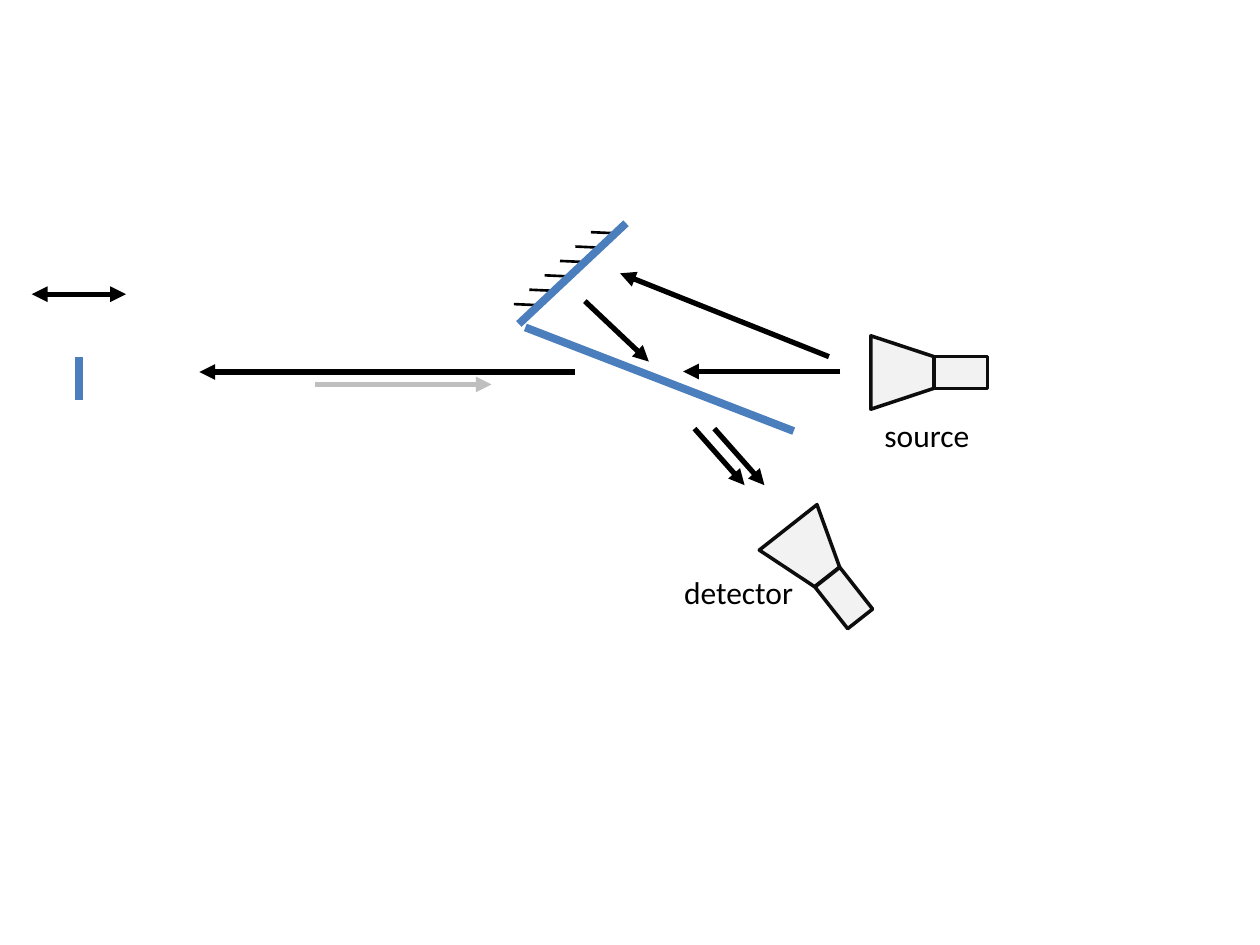
from dataclasses import dataclass
from math import cos, radians, sin

from lxml.etree import SubElement
from pptx import Presentation
from pptx.dml.color import RGBColor
from pptx.enum.shapes import MSO_CONNECTOR as Line, MSO_SHAPE as Shape
from pptx.enum.text import MSO_ANCHOR, PP_ALIGN
from pptx.oxml.ns import qn
from pptx.util import Cm, Pt


@dataclass(frozen=True)
class Theme:
    font: str = "Calibri"
    label_size: float = 18
    black: str = "000000"
    mirror: str = "4B7EBC"
    echo: str = "BFBFBF"
    horn_fill: str = "F2F2F2"
    horn_line: str = "0D0D0D"
    optic_width: float = 4.5
    ray_width: float = 3
    horn_width: float = 2
    tick_width: float = 1.5


THEME = Theme()


def rgb(color):
    return RGBColor.from_string(color)


def add_line(shapes, box, start, end, color, width, heads=()):
    """Draw a line between two points relative to box; heads names its arrow ends."""
    left, top = box[:2]
    c = shapes.add_connector(Line.STRAIGHT, Cm(left + start[0]), Cm(top + start[1]),
                             Cm(left + end[0]), Cm(top + end[1]))
    c.line.color.rgb = rgb(color)
    c.line.width = Pt(width)
    ln = c.line._get_or_add_ln()
    for head in heads:
        SubElement(ln, qn(f"a:{head}"), type="triangle")
    SubElement(c._element.spPr, qn("a:effectLst"))


def add_ray(shapes, box, start, tip, color=THEME.black, heads=("tailEnd",)):
    add_line(shapes, box, start, tip, color, THEME.ray_width, heads)


def add_optic(shapes, box, start, end):
    add_line(shapes, box, start, end, THEME.mirror, THEME.optic_width)


def add_label(shapes, box, text):
    tb = shapes.add_textbox(*map(Cm, box))
    tf = tb.text_frame
    tf.word_wrap = True
    tf.vertical_anchor = MSO_ANCHOR.TOP
    p = tf.paragraphs[0]
    p.text = text
    p.alignment = PP_ALIGN.LEFT
    p.font.name = THEME.font
    p.font.size = Pt(THEME.label_size)
    p.font.color.rgb = rgb(THEME.black)


def add_horn_part(shapes, kind, center, size, angle):
    (cx, cy), (w, h) = center, size
    sp = shapes.add_shape(kind, Cm(cx - w / 2), Cm(cy - h / 2), Cm(w), Cm(h))
    sp.rotation = angle
    sp.shadow.inherit = False
    sp.fill.solid()
    sp.fill.fore_color.rgb = rgb(THEME.horn_fill)
    sp.line.color.rgb = rgb(THEME.horn_line)
    sp.line.width = Pt(THEME.horn_width)
    return sp


def add_horn(s, center, angle, text, label_box):
    """Place a horn whose mouth is at center and whose throat lies along angle."""
    grp = s.shapes.add_group_shape().shapes
    mouth = add_horn_part(grp, Shape.TRAPEZOID, center, (1.48, 1.27), angle + 90)
    mouth.adjustments[0] = 0.33
    reach = 1.18
    throat = (center[0] + reach * cos(radians(angle)),
              center[1] + reach * sin(radians(angle)))
    add_horn_part(grp, Shape.RECTANGLE, throat, (1.07, 0.64), angle)
    add_label(s.shapes, label_box, text)


def add_hatched_mirror(s, box):
    _, _, w, h = box
    grp = s.shapes.add_group_shape().shapes
    for i in range(6):
        x, y = 0.31 * i, 1.63 - 0.29 * i
        add_line(grp, box, (x, y), (x + 0.45, y + 0.02), THEME.black, THEME.tick_width)
    add_optic(grp, box, (w, 0), (0.1, h))


def add_beam_splitter(s, box):
    """Draw the splitter with the rays that meet it and leave for the detector."""
    _, _, w, h = box
    add_optic(s.shapes, box, (0, 0), (w, h))
    rays = [((6.35, 0.89), (3.18, 0.89)),
            ((6.12, 0.59), (1.91, -1.09)),
            ((1.2, -0.53), (2.49, 0.69))]
    rays += [((x, 2.04), (x + 1.01, 3.18)) for x in (3.41, 3.81)]
    for start, tip in rays:
        add_ray(s.shapes, box, start, tip)


def add_moving_target(s, box):
    """Draw the small target, its back-and-forth motion and its beams."""
    _, _, w, h = box
    add_optic(s.shapes, box, (w / 2, 1.27), (w / 2, h))
    add_ray(s.shapes, box, (0, 0), (w, 0), heads=("headEnd", "tailEnd"))
    add_ray(s.shapes, box, (10.95, 1.57), (3.38, 1.57))
    add_ray(s.shapes, box, (5.72, 1.82), (9.27, 1.82), THEME.echo)


def main():
    prs = Presentation()
    prs.slide_width, prs.slide_height = Cm(25.4), Cm(19.05)
    s = prs.slides.add_slide(prs.slide_layouts[6])
    add_beam_splitter(s, (10.59, 6.6, 5.41, 2.09))
    add_horn(s, (18.19, 7.51), 0, "source", (17.58, 8.26, 2.34, 1.07))
    add_hatched_mirror(s, (10.36, 4.5, 2.26, 2.03))
    add_horn(s, (16.28, 11.13), 51.8, "detector", (13.54, 11.43, 2.74, 1.02))
    add_moving_target(s, (0.64, 5.93, 1.9, 2.13))
    prs.save("out.pptx")


if __name__ == "__main__":
    main()
